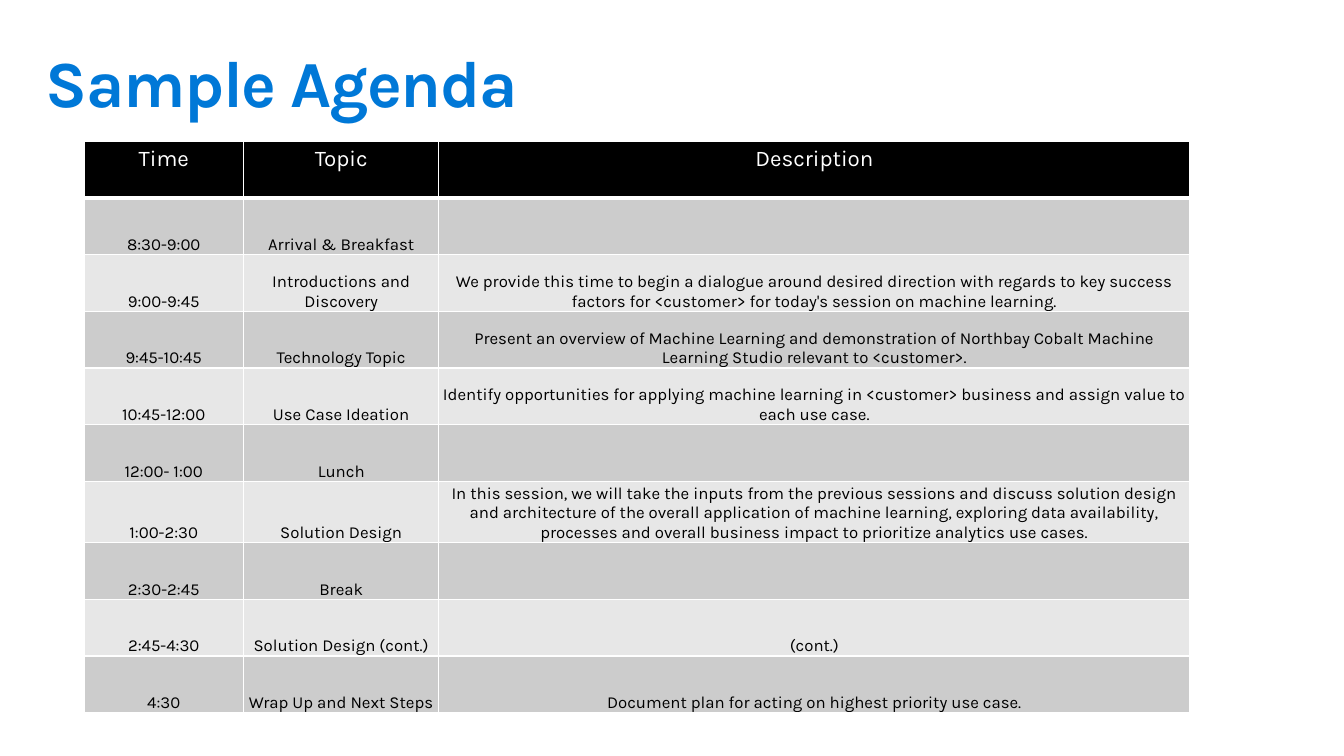
from lxml.etree import SubElement
from pptx import Presentation
from pptx.dml.color import RGBColor
from pptx.enum.text import MSO_ANCHOR as Anchor, PP_ALIGN as Align
from pptx.oxml.ns import qn
from pptx.util import Pt

PX = 6350
COLORS = {
    "title": "0078D7",
    "white": "FFFFFF",
    "black": "000000",
    "odd": "CCCCCC",
    "even": "E7E7E7",
}
COLUMN_WIDTHS = [228, 279, 1073]
ROW_HEIGHT = 81
AGENDA = [
    ("Time", "Topic", "Description"),
    ("8:30-9:00", "Arrival & Breakfast", ""),
    ("9:00-9:45", "Introductions and Discovery",
     "We provide this time to begin a dialogue around desired direction with regards "
     "to key success factors for <customer> for today's session on machine learning."),
    ("9:45-10:45", "Technology Topic",
     "Present an overview of Machine Learning and demonstration of Northbay Cobalt "
     "Machine Learning Studio relevant to <customer>."),
    ("10:45-12:00", "Use Case Ideation",
     "Identify opportunities for applying machine learning in <customer> business "
     "and assign value to each use case."),
    ("12:00- 1:00", "Lunch", ""),
    ("1:00-2:30", "Solution Design",
     "In this session, we will take the inputs from the previous sessions and discuss "
     "solution design and architecture of the overall application of machine learning, "
     "exploring data availability, processes and overall business impact to prioritize "
     "analytics use cases."),
    ("2:30-2:45", "Break", ""),
    ("2:45-4:30", "Solution Design (cont.)", "(cont.)"),
    ("4:30", "Wrap Up and Next Steps",
     "Document plan for acting on highest priority use case."),
]


def apply(target, values):
    for name, value in values.items():
        setattr(target, name, value)


class AgendaSlide:
    font_name = "Karla"

    def __init__(self, deck):
        self.slide = deck.slides.add_slide(deck.slide_layouts[6])

    def add_text(self, paragraph, text, size, color, bold=False):
        run = paragraph.add_run()
        run.text = text
        apply(run.font, {"name": self.font_name, "size": Pt(size), "bold": bold})
        run.font.color.rgb = RGBColor.from_string(COLORS[color])
        return run

    def title(self, text, left, top, width, height):
        heading = self.slide.shapes.add_textbox(
            *(PX * n for n in (left, top, width, height)))
        frame = heading.text_frame
        apply(frame, {"word_wrap": True, "margin_left": 23 * PX, "margin_right": 23 * PX,
                      "margin_top": 14 * PX, "margin_bottom": 14 * PX})
        run = self.add_text(frame.paragraphs[0], text, 47, "title", True)
        run._r.get_or_add_rPr().set("spc", "-100")

    def borders(self, cell, bottom):
        properties = cell._tc.get_or_add_tcPr()
        for side, points in {"L": 1, "R": 1, "T": 1, "B": bottom}.items():
            line = SubElement(properties, qn(f"a:ln{side}"), w=str(Pt(points)))
            fill = SubElement(line, qn("a:solidFill"))
            SubElement(fill, qn("a:srgbClr"), val=COLORS["white"])

    def cell(self, cell, text, row):
        header = row == 0
        self.borders(cell, 3 if header else 1)
        cell.fill.solid()
        band = "black" if header else "odd" if row % 2 else "even"
        cell.fill.fore_color.rgb = RGBColor.from_string(COLORS[band])
        if not header:
            apply(cell, {"vertical_anchor": Anchor.BOTTOM, "margin_left": PX,
                         "margin_right": PX, "margin_top": PX, "margin_bottom": 0})
        if text:
            paragraph = cell.text_frame.paragraphs[0]
            paragraph.alignment = Align.CENTER
            self.add_text(paragraph, text, 16 if header else 12,
                          "white" if header else "black")

    def table(self, rows, left, top):
        size = sum(COLUMN_WIDTHS), ROW_HEIGHT * len(rows)
        agenda = self.slide.shapes.add_table(
            len(rows), len(COLUMN_WIDTHS), *(PX * n for n in (left, top, *size))).table
        for column, width in zip(agenda.columns, COLUMN_WIDTHS):
            column.width = width * PX
        for row, texts in enumerate(rows):
            agenda.rows[row].height = ROW_HEIGHT * PX
            for column, text in enumerate(texts):
                self.cell(agenda.cell(row, column), text, row)


def main():
    deck = Presentation()
    apply(deck, {"slide_width": 1920 * PX, "slide_height": 1080 * PX})
    page = AgendaSlide(deck)
    page.title("Sample Agenda", 42, 46, 1836, 141)
    page.table(AGENDA, 120, 202)
    deck.save("out.pptx")


if __name__ == "__main__":
    main()
